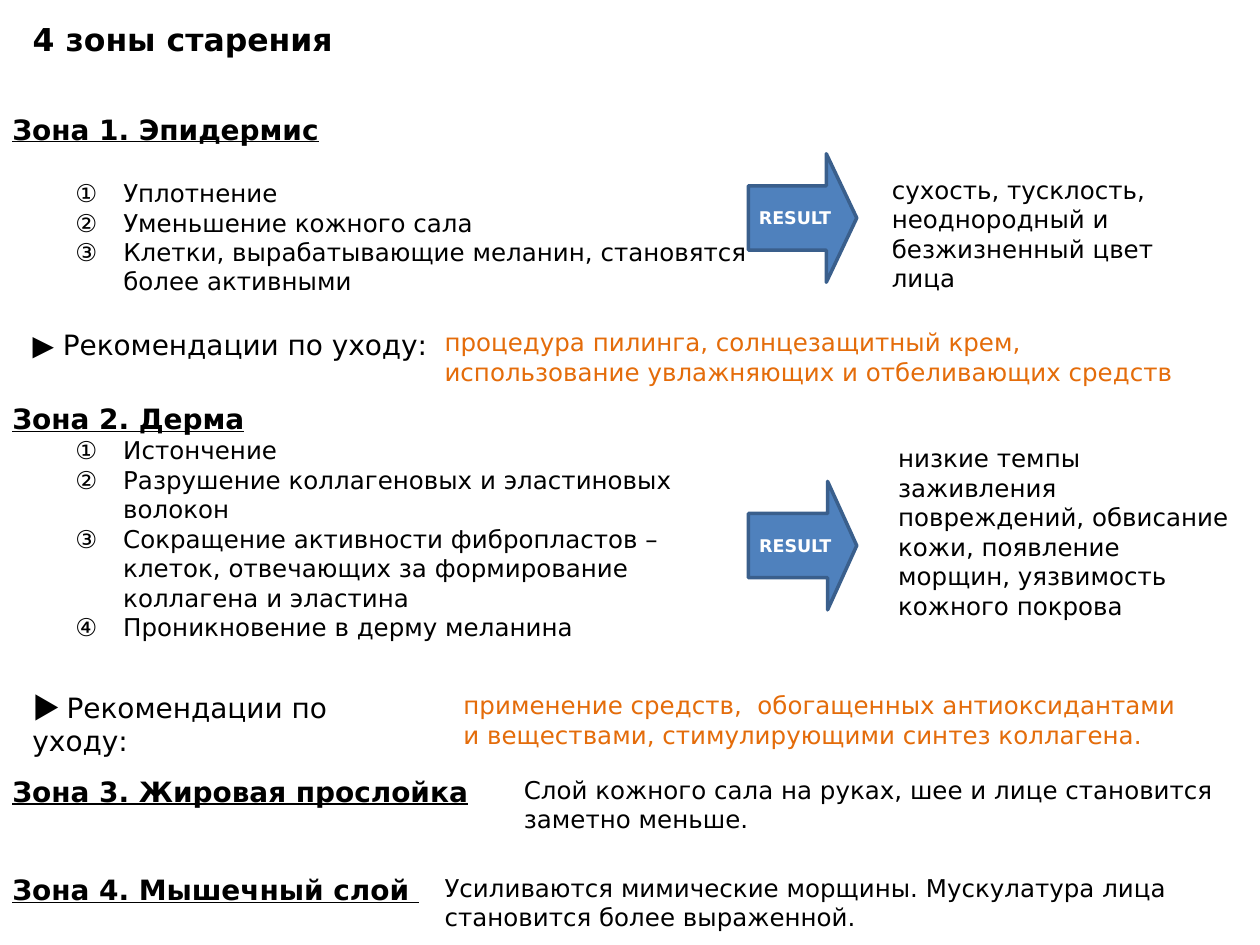
from lxml import etree
from pptx import Presentation
from pptx.dml.color import RGBColor
from pptx.enum.shapes import MSO_SHAPE
from pptx.enum.text import MSO_ANCHOR, MSO_AUTO_SIZE, PP_ALIGN
from pptx.oxml.ns import qn
from pptx.util import Inches, Pt

"""Build a slide on the four zones of skin ageing."""

ARROW = MSO_SHAPE.RIGHT_ARROW
TOP, MIDDLE = MSO_ANCHOR.TOP, MSO_ANCHOR.MIDDLE
LEFT, CENTER = PP_ALIGN.LEFT, PP_ALIGN.CENTER
FIXED = MSO_AUTO_SIZE.NONE
SANS, CJK = "DejaVu Sans", "Noto Sans CJK KR"
COLORS = {"text": "000000", "tip": "E46C0A", "fill": "4F81BD",
          "edge": "3A5F8C", "white": "FFFFFF"}


def add_run(para, text, size, color="text", head=False, face=SANS):
    run = para.add_run()
    run.text = text
    font = run.font
    font.size, font.name = Pt(size), face
    font.bold = font.underline = head
    font.color.rgb = RGBColor.from_string(COLORS[color])
    east = etree.SubElement(font._element, qn("a:ea"))
    east.set("typeface", face)
    return run


def add_box(left, top, width, height):
    box = slide.shapes.add_textbox(
        Inches(left), Inches(top), Inches(width), Inches(height))
    box.text_frame.word_wrap = True
    return box.text_frame


prs = Presentation()
prs.slide_width, prs.slide_height = Inches(10), Inches(7.5)
slide = prs.slides.add_slide(prs.slide_layouts[5])

title = slide.shapes.title
title.left, title.top = Inches(0.16), Inches(0.11)
title.width, title.height = Inches(8.83), Inches(0.4)
frame = title.text_frame
frame.auto_size, frame.vertical_anchor = FIXED, TOP
frame.paragraphs[0].alignment = LEFT
run = add_run(frame.paragraphs[0], "4 зоны старения", 18)
run.font.bold = True

for top, head in [(1.22, 0.281), (3.82, 0.269)]:
    arrow = slide.shapes.add_shape(
        ARROW, Inches(5.94), Inches(top), Inches(0.86), Inches(1.02))
    arrow.adjustments[1] = head
    arrow.shadow.inherit = False
    arrow.fill.solid()
    arrow.fill.fore_color.rgb = RGBColor.from_string(COLORS["fill"])
    arrow.line.color.rgb = RGBColor.from_string(COLORS["edge"])
    arrow.line.width = Pt(2)
    frame = arrow.text_frame
    frame.vertical_anchor = MIDDLE
    frame.margin_left = frame.margin_right = Inches(0.04)
    frame.margin_top = frame.margin_bottom = Inches(0.04)
    frame.paragraphs[0].alignment = CENTER
    run = add_run(frame.paragraphs[0], "RESULT", 10, "white")
    run.font.bold = True

zones = [
    (0.84, 6.25, 1.58, "Зона 1. Эпидермис", 18.6, [
        "Уплотнение",
        "Уменьшение кожного сала",
        "Клетки, вырабатывающие меланин, становятся более активными"]),
    (3.14, 5.94, 2.02, "Зона 2. Дерма", 0, [
        "Истончение",
        "Разрушение коллагеновых и эластиновых волокон",
        "Сокращение активности фибропластов – клеток, отвечающих за "
        "формирование коллагена и эластина",
        "Проникновение в дерму меланина"]),
]
for top, width, height, name, gap, signs in zones:
    frame = add_box(0, top, width, height)
    add_run(frame.paragraphs[0], name, 16, head=True)
    for sign in signs:
        para = frame.add_paragraph()
        para.level = 1
        para.space_before = Pt(gap if sign == signs[0] else 0)
        props = para._p.get_or_add_pPr()
        props.set("marL", str(Inches(0.88)))
        props.set("indent", str(Inches(-0.38)))
        mark = etree.SubElement(props, qn("a:buAutoNum"))
        mark.set("type", "circleNumDbPlain")
        add_run(para, sign, 14)

for top, width, name in [(6.1, 3.9, "Зона 3. Жировая прослойка"),
                         (6.88, 3.74, "Зона 4. Мышечный слой ")]:
    frame = add_box(0, top, width, 0.37)
    add_run(frame.paragraphs[0], name, 16, head=True)

for top, width, face in [(2.55, 3.35, SANS), (5.43, 3.27, CJK)]:
    para = add_box(0.16, top, width, 0.37).paragraphs[0]
    add_run(para, "▶ ", 16, face=face)
    add_run(para, "Рекомендации по уходу:", 16)

notes = [
    (6.98, 1.34, 2.73, 1.04, "text",
     "сухость, тусклость, неоднородный и безжизненный цвет лица"),
    (3.43, 2.55, 6.26, 0.84, "tip",
     "процедура пилинга, солнцезащитный крем, использование "
     "увлажняющих и отбеливающих средств"),
    (7.03, 3.47, 2.89, 1.55, "text",
     "низкие темпы заживления повреждений, обвисание кожи, "
     "появление морщин, уязвимость кожного покрова"),
    (3.58, 5.43, 5.95, 0.84, "tip",
     "применение средств,  обогащенных антиоксидантами и веществами, "
     "стимулирующими синтез коллагена."),
    (4.06, 6.1, 5.94, 0.84, "text",
     "Слой кожного сала на руках, шее и лице становится заметно меньше."),
    (3.43, 6.88, 6.57, 0.57, "text",
     "Усиливаются мимические морщины. Мускулатура лица становится "
     "более выраженной."),
]
for left, top, width, height, color, text in notes:
    frame = add_box(left, top, width, height)
    add_run(frame.paragraphs[0], text, 14, color)

prs.save("out.pptx")
